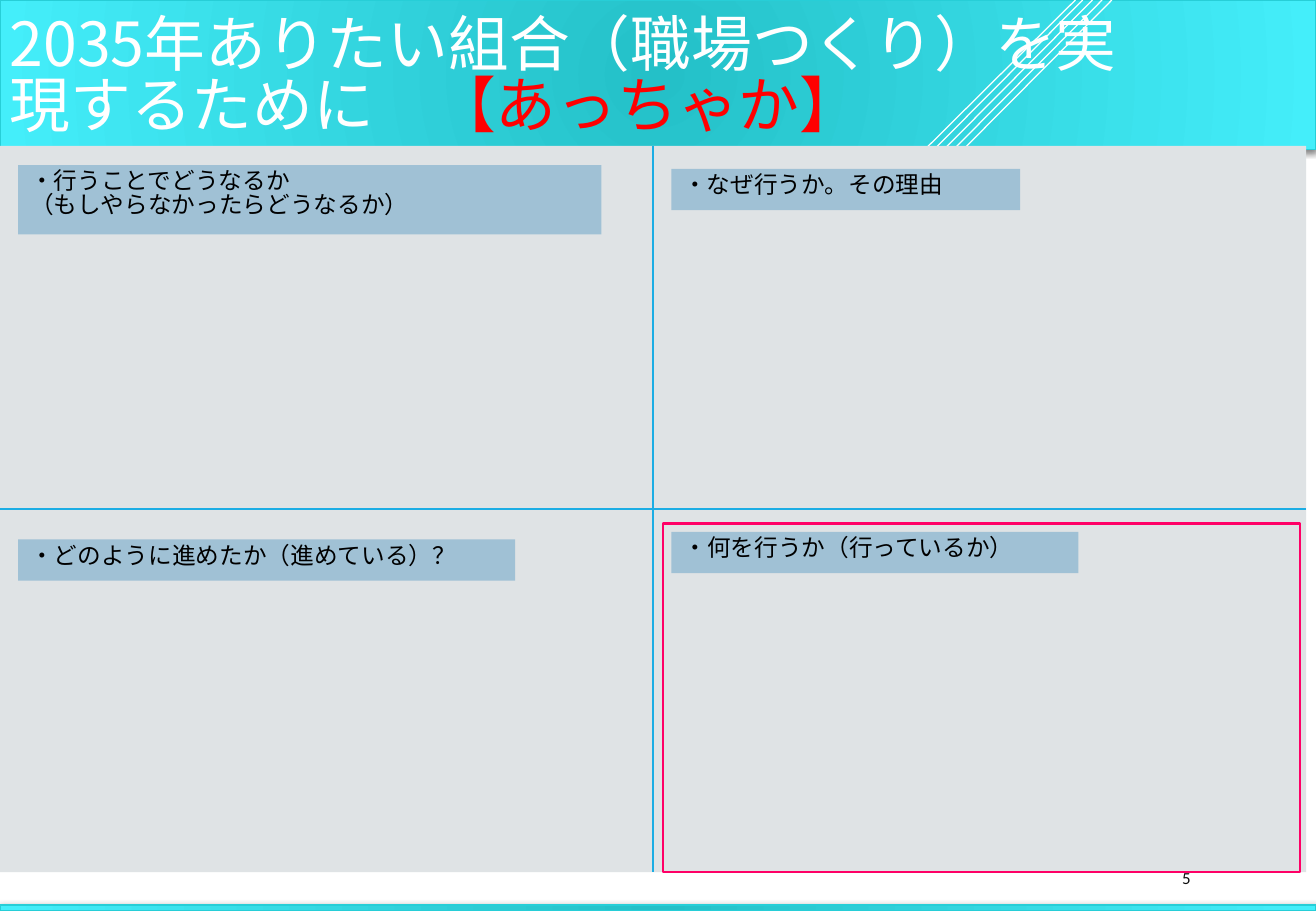
import pptx
import pptx.util
import pptx.dml.color
import pptx.enum.shapes
import pptx.enum.text
import pptx.oxml
from dataclasses import dataclass
from pptx.util import Inches

NS = 'xmlns:a="http://schemas.openxmlformats.org/drawingml/2006/main"'


@dataclass(frozen=True)
class Theme:
    """Colours, fonts and type sizes of the slide."""
    dark: str = "24C0C8"
    light: str = "44EEFA"
    edge: str = "27CED7"
    white: str = "FFFFFF"
    red: str = "FF0000"
    panel: str = "DFE3E5"
    rule: str = "1CADE4"
    label: str = "A0C1D5"
    ink: str = "000000"
    page: str = "0D0D0D"
    frame: str = "FF0066"
    font: str = "Noto Sans CJK JP"
    digit: str = "Calibri"
    big: int = 36
    mid: int = 14
    small: int = 10
    lead: float = 0.83


T = Theme()


def color(code):
    """Turn a hex code into a colour."""
    return pptx.dml.color.RGBColor.from_string(code)


def add_run(para, text, size, code, font):
    """Add one formatted run to a paragraph."""
    run = para.add_run()
    run.text = text
    run.font.size = pptx.util.Pt(size)
    run.font.name = font
    run.font.color.rgb = color(code)
    east = pptx.oxml.parse_xml(f'<a:ea {NS} typeface="{font}"/>')
    run.font._element.find(pptx.oxml.ns.qn("a:latin")).addnext(east)


def add_rect(slide, box, fill=None, line=None, width=0.75):
    """Draw a rectangle with an optional fill and outline."""
    kind = pptx.enum.shapes.MSO_SHAPE.RECTANGLE
    shape = slide.shapes.add_shape(kind, *map(Inches, box))
    shape.shadow.inherit = False
    if fill:
        shape.fill.solid()
        shape.fill.fore_color.rgb = color(fill)
    else:
        shape.fill.background()
    if line:
        shape.line.color.rgb = color(line)
        shape.line.width = pptx.util.Pt(width)
    else:
        shape.line.fill.background()
    return shape


def add_line(slide, start, end, code):
    """Draw a thin straight line."""
    kind = pptx.enum.shapes.MSO_CONNECTOR.STRAIGHT
    line = slide.shapes.add_connector(kind, *map(Inches, (*start, *end)))
    line.line.color.rgb = color(code)
    line.line.width = pptx.util.Pt(0.75)
    line._element.spPr.append(pptx.oxml.parse_xml(f"<a:effectLst {NS}/>"))


def add_band(slide, box):
    """Draw a bar with a radial gradient and a soft shadow."""
    props = add_rect(slide, box, T.dark, T.edge)._element.spPr
    grad = pptx.oxml.parse_xml(
        f'<a:gradFill {NS} rotWithShape="1"><a:gsLst>'
        f'<a:gs pos="0"><a:srgbClr val="{T.dark}"/></a:gs>'
        f'<a:gs pos="100000"><a:srgbClr val="{T.light}"/></a:gs></a:gsLst>'
        '<a:path path="circle"><a:fillToRect l="100000" t="100000" '
        'r="100000" b="100000"/></a:path></a:gradFill>')
    props.replace(props.find(pptx.oxml.ns.qn("a:solidFill")), grad)
    shade = pptx.oxml.parse_xml(
        f'<a:outerShdw {NS} blurRad="50800" dist="12700" dir="5400000" '
        'rotWithShape="0"><a:srgbClr val="000000"><a:alpha val="50000"/>'
        '</a:srgbClr></a:outerShdw>')
    props.find(pptx.oxml.ns.qn("a:effectLst")).append(shade)


def add_head(slide, box):
    """Build the top band with its stripes and the title."""
    left, top, width, height = box
    add_band(slide, box)
    add_line(slide, (left + 7.34, top + 1.5), (left + 8.85, top), T.white)
    for step in range(4):
        foot = left + 7.37 + 0.08 * step
        add_line(slide, (foot, top + 1.55), (foot + 1.54, top), T.white)
    title = slide.shapes.title
    title.left, title.top = Inches(left - 0.02), Inches(top - 0.03)
    title.width, title.height = Inches(9.45), Inches(height + 0.13)
    slide.shapes._spTree.append(title._element)
    frame = title.text_frame
    frame.word_wrap = True
    frame.auto_size = pptx.enum.text.MSO_AUTO_SIZE.NONE
    frame.vertical_anchor = pptx.enum.text.MSO_ANCHOR.MIDDLE
    para = frame.paragraphs[0]
    para.alignment = pptx.enum.text.PP_ALIGN.LEFT
    para.line_spacing = T.lead
    add_run(para, "2035年ありたい組合（職場つくり）を実現するために　", T.big, T.white, T.font)
    add_run(para, "【あっちゃか】", T.big, T.red, T.font)


def add_label(slide, box, lines):
    """Place a heading box with one paragraph per line."""
    frame = add_rect(slide, box, T.label).text_frame
    frame.word_wrap = True
    frame.vertical_anchor = pptx.enum.text.MSO_ANCHOR.TOP
    for index, text in enumerate(lines):
        para = frame.add_paragraph() if index else frame.paragraphs[0]
        para.alignment = pptx.enum.text.PP_ALIGN.LEFT
        para.line_spacing = T.lead
        add_run(para, text, T.mid, T.ink, T.font)


def add_grid(slide, box):
    """Build the four-part panel with its headings and frame."""
    left, top, width, height = box
    mid_x, mid_y = left + width / 2, top + height / 2
    add_rect(slide, box, T.panel)
    add_line(slide, (mid_x, top), (mid_x, top + height), T.rule)
    add_line(slide, (left, mid_y), (left + width, mid_y), T.rule)
    labels = (
        (mid_x, top, 0.19, 2.87, ["・なぜ行うか。その理由"]),
        (mid_x, mid_y, 0.19, 3.35, ["・何を行うか（行っているか）"]),
        (left, mid_y, 0.25, 4.09, ["・どのように進めたか（進めている）？"]),
        (left, top, 0.16, 4.8,
         ["・行うことでどうなるか", "（もしやらなかったらどうなるか）"]),
    )
    for x, y, drop, wide, lines in labels:
        tall = 0.11 + 0.23 * len(lines)
        add_label(slide, (x + 0.15, y + drop, wide, tall), lines)
    add_rect(slide, (mid_x + 0.08, mid_y + 0.12, width / 2 - 0.13,
                     height / 2 - 0.12), line=T.frame, width=1.25)


def add_page(slide, box):
    """Place the page number."""
    frame = slide.shapes.add_textbox(*map(Inches, box)).text_frame
    frame.word_wrap = True
    frame.vertical_anchor = pptx.enum.text.MSO_ANCHOR.MIDDLE
    add_run(frame.paragraphs[0], "5", T.small, T.page, T.digit)


def main():
    """Build and save the slide."""
    deck = pptx.Presentation()
    deck.slide_width, deck.slide_height = Inches(10.83), Inches(7.5)
    slide = deck.slides.add_slide(deck.slide_layouts[5])
    add_band(slide, (0, 7.45, 10.83, 0.05))
    add_head(slide, (0, 0, 10.83, 1.23))
    add_grid(slide, (0, 1.2, 10.75, 5.98))
    add_page(slide, (9.63, 7.08, 0.87, 0.3))
    deck.save("out.pptx")


if __name__ == "__main__":
    main()
